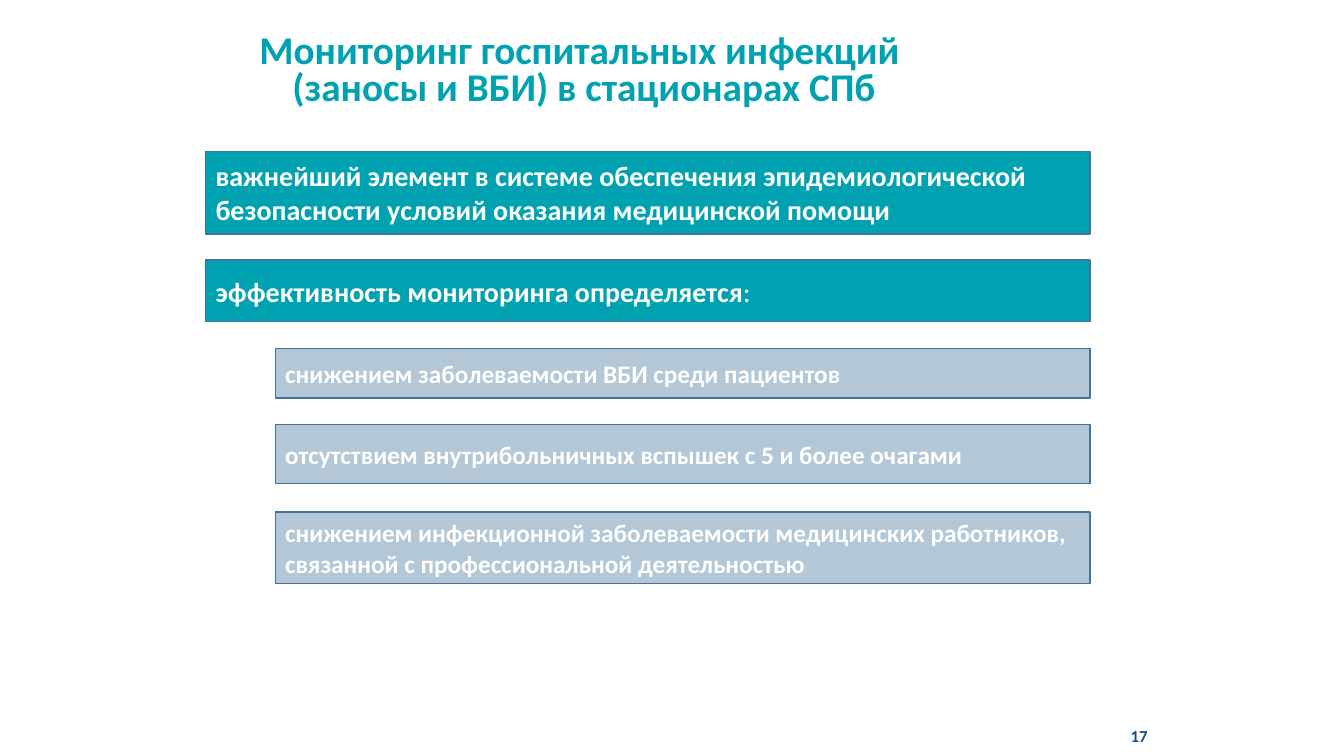
from dataclasses import dataclass

from pptx import Presentation
from pptx.dml.color import RGBColor
from pptx.enum.shapes import MSO_SHAPE
from pptx.enum.text import MSO_ANCHOR as Anchor, PP_ALIGN as Align
from pptx.util import Inches, Pt

TEAL, PALE, EDGE, NAVY, WHITE = "00A2B1", "B4C7D6", "43739E", "1F4E79", "FFFFFF"
RIGHT = 10.81


@dataclass
class Level:
    left: float
    fill: str
    size: int


@dataclass
class Bar:
    level: Level
    top: float
    height: float
    text: str
    light_tail: str = ""


MAIN = Level(2.04, TEAL, 20)
SUB = Level(2.73, PALE, 18)

BARS = [
    Bar(MAIN, 1.5, 0.82, "важнейший элемент в системе обеспечения эпидемиологической "
        "безопасности условий оказания медицинской помощи"),
    Bar(MAIN, 2.58, 0.61, "эффективность мониторинга определяется", ":"),
    Bar(SUB, 3.46, 0.49, "снижением заболеваемости ВБИ среди пациентов"),
    Bar(SUB, 4.21, 0.59, "отсутствием внутрибольничных вспышек с 5 и более очагами"),
    Bar(SUB, 5.08, 0.71, "снижением инфекционной заболеваемости медицинских работников, "
        "связанной с профессиональной деятельностью"),
]


def rgb(color: str) -> RGBColor:
    return RGBColor.from_string(color)


def style(r, size: int, color: str, bold: bool = True) -> None:
    r.font.name = "Calibri"
    r.font.size = Pt(size)
    r.font.bold = bold
    r.font.color.rgb = rgb(color)


def add_text(s, box: tuple, text: str, size: int, color: str,
             align: Align, anchor: Anchor, spacing: float = 1.0) -> None:
    tf = s.shapes.add_textbox(*map(Inches, box)).text_frame
    tf.word_wrap = True
    tf.vertical_anchor = anchor
    tf.text = text
    for p in tf.paragraphs:
        p.alignment = align
        p.line_spacing = spacing
        style(p.runs[0], size, color)


def add_bar(s, bar: Bar) -> None:
    left = bar.level.left
    sp = s.shapes.add_shape(MSO_SHAPE.RECTANGLE, Inches(left), Inches(bar.top),
                            Inches(RIGHT - left), Inches(bar.height))
    sp.shadow.inherit = False
    sp.fill.solid()
    sp.fill.fore_color.rgb = rgb(bar.level.fill)
    sp.line.color.rgb = rgb(EDGE)
    sp.line.width = Pt(1)
    tf = sp.text_frame
    tf.word_wrap = True
    tf.vertical_anchor = Anchor.MIDDLE
    tf.text = bar.text
    p = tf.paragraphs[0]
    p.alignment = Align.LEFT
    style(p.runs[0], bar.level.size, WHITE)
    if bar.light_tail:
        r = p.add_run()
        r.text = bar.light_tail
        style(r, bar.level.size, WHITE, bold=False)


def main() -> None:
    prs = Presentation()
    prs.slide_width, prs.slide_height = Inches(13.33), Inches(7.5)
    s = prs.slides.add_slide(prs.slide_layouts[6])
    add_text(s, (9.15, 7.1, 2.33, 0.4), "17", 12, NAVY, Align.RIGHT, Anchor.MIDDLE)
    add_text(s, (2.04, 0.29, 7.5, 0.85),
             "Мониторинг госпитальных инфекций \n(заносы и ВБИ) в стационарах СПб",
             28, TEAL, Align.CENTER, Anchor.TOP, 0.8)
    for bar in BARS:
        add_bar(s, bar)
    prs.save("out.pptx")


if __name__ == "__main__":
    main()
